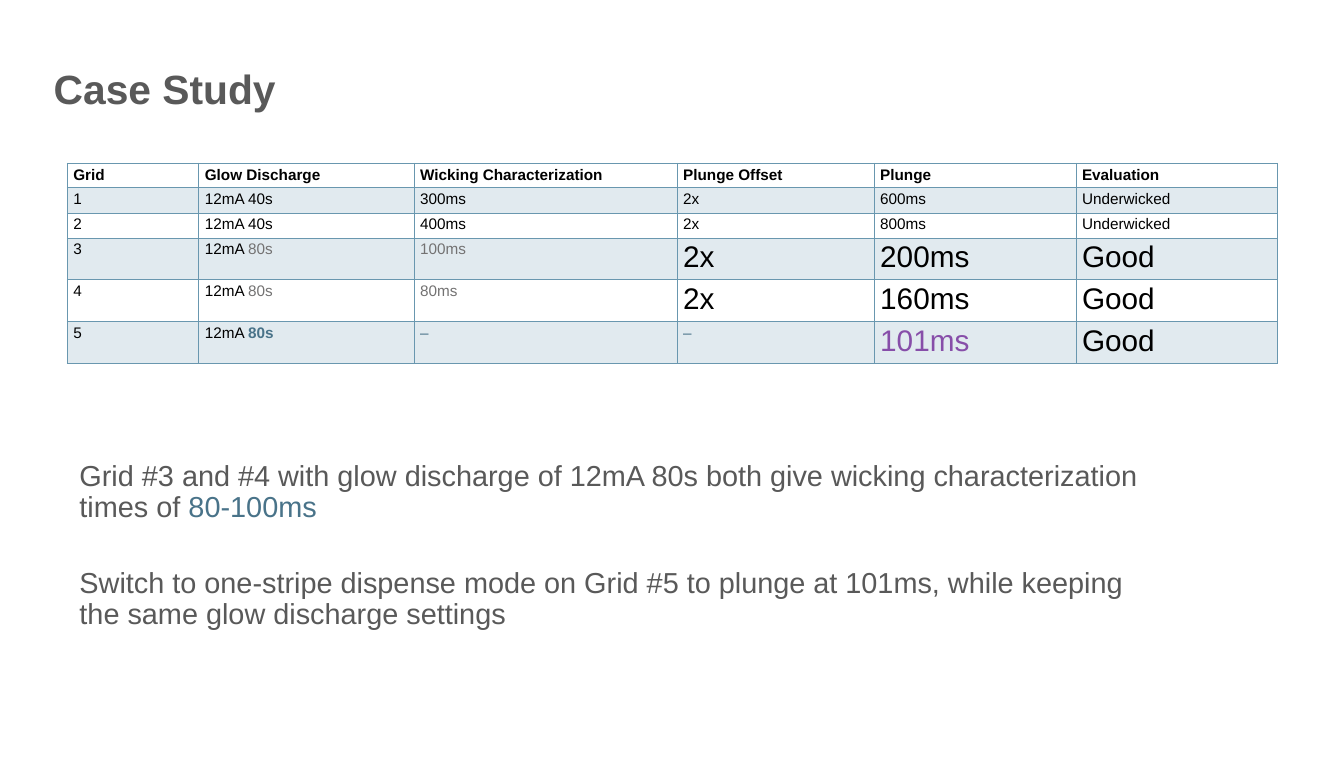
"""Build the Case Study slide: a grid settings table with two conclusions below."""
from lxml import etree
from pptx import Presentation, util as u
from pptx.dml.color import RGBColor
from pptx.enum import text
from pptx.oxml import ns

TITLE = [("Case Study", "title")]
HEADERS = ["Grid", "Glow Discharge", "Wicking Characterization", "Plunge Offset", "Plunge", "Evaluation"]
ROWS = [
    ["1", "12mA 40s", "300ms", "2x", "600ms", "Underwicked"],
    ["2", "12mA 40s", "400ms", "2x", "800ms", "Underwicked"],
    ["3", [("12mA ", "cell"), ("80s", "muted")], [("100ms", "muted")],
     [("2x", "large")], [("200ms", "large")], [("Good", "large")]],
    ["4", [("12mA ", "cell"), ("80s", "muted")], [("80ms", "muted")],
     [("2x", "large")], [("160ms", "large")], [("Good", "large")]],
    ["5", [("12mA ", "cell"), ("80s", "strong")], [("–", "accent")],
     [("–", "accent")], [("101ms", "highlight")], [("Good", "large")]],
]
CONCLUSIONS = [
    [("Grid #3 and #4 with glow discharge of 12mA 80s both give wicking characterization times of ", "body"),
     ("80-100ms", "body_accent")],
    [("Switch to one-stripe dispense mode on Grid #5 to plunge at 101ms, "
      "while keeping the same glow discharge settings", "body")],
]

THEME = {
    "font": "Arial",
    "border": "6997AF",
    "band": "E1EAEF",
    "styles": {
        "title": (48, "595959", True),
        "header": (18, "000000", True),
        "cell": (18, "000000", False),
        "muted": (18, "737272", False),
        "accent": (18, "497389", False),
        "strong": (18, "497389", True),
        "large": (35, "000000", False),
        "highlight": (35, "874EA9", False),
        "body": (34, "595959", False),
        "body_accent": (34, "497389", False),
    },
}

SLIDE_SIZE = (55.8, 31.42)
TITLE_BOX = (1.98, 2.03, 36.91, 2.82)
BODY_BOX = (2.79, 18.9, 46.33, 8.48)
TABLE_ORIGIN = (2.79, 6.78)
COLUMN_WIDTHS = [5.46, 8.94, 10.92, 8.18, 8.38, 8.38]
ROW_HEIGHTS = [0.95, 1.04, 1.04, 1.63, 1.63, 1.63]
LINE_SPACING = 0.9
CONCLUSION_GAP = 53


def add_runs(paragraph, runs):
    """Append styled runs to a paragraph."""
    for content, style in runs:
        size, color, bold = THEME["styles"][style]
        run = paragraph.add_run()
        run.text = content
        run.font.name = THEME["font"]
        run.font.size = u.Pt(size)
        run.font.bold = bold
        run.font.color.rgb = RGBColor.from_string(color)


def add_text(slide, box, paragraphs, anchor, side_inset, end_inset):
    """Add a wrapped text box holding paragraphs of styled runs."""
    frame = slide.shapes.add_textbox(*map(u.Cm, box)).text_frame
    frame.word_wrap = True
    frame.vertical_anchor = anchor
    frame.margin_left = frame.margin_right = u.Cm(side_inset)
    frame.margin_top = frame.margin_bottom = u.Cm(end_inset)
    for index, runs in enumerate(paragraphs):
        paragraph = frame.add_paragraph() if index else frame.paragraphs[0]
        paragraph.line_spacing = LINE_SPACING
        if index:
            paragraph.space_before = u.Pt(CONCLUSION_GAP)
        add_runs(paragraph, runs)


def add_borders(cell):
    """Outline all four sides of a table cell."""
    properties = cell._tc.get_or_add_tcPr()
    for side in ("lnL", "lnR", "lnT", "lnB"):
        line = etree.SubElement(properties, ns.qn(f"a:{side}"), w=str(u.Pt(1)))
        fill = etree.SubElement(line, ns.qn("a:solidFill"))
        etree.SubElement(fill, ns.qn("a:srgbClr"), val=THEME["border"])


def add_grid_table(slide):
    """Add the banded table of grid settings."""
    size = (sum(COLUMN_WIDTHS), sum(ROW_HEIGHTS))
    table = slide.shapes.add_table(
        len(ROW_HEIGHTS), len(COLUMN_WIDTHS), *map(u.Cm, TABLE_ORIGIN + size)).table
    for column, width in zip(table.columns, COLUMN_WIDTHS):
        column.width = u.Cm(width)
    for row_index, values in enumerate([HEADERS] + ROWS):
        table.rows[row_index].height = u.Cm(ROW_HEIGHTS[row_index])
        default_style = "cell" if row_index else "header"
        for column_index, value in enumerate(values):
            cell = table.cell(row_index, column_index)
            add_borders(cell)
            if row_index % 2:
                cell.fill.solid()
                cell.fill.fore_color.rgb = RGBColor.from_string(THEME["band"])
            else:
                cell.fill.background()
            runs = [(value, default_style)] if isinstance(value, str) else value
            add_runs(cell.text_frame.paragraphs[0], runs)


def main():
    """Assemble and save the slide."""
    presentation = Presentation()
    presentation.slide_width, presentation.slide_height = map(u.Cm, SLIDE_SIZE)
    slide = presentation.slides.add_slide(presentation.slide_layouts[6])
    add_text(slide, TITLE_BOX, [TITLE], text.MSO_ANCHOR.BOTTOM, 0.25, 0.13)
    add_text(slide, BODY_BOX, CONCLUSIONS, text.MSO_ANCHOR.TOP, 0.51, 0.25)
    add_grid_table(slide)
    presentation.save("out.pptx")


if __name__ == "__main__":
    main()
